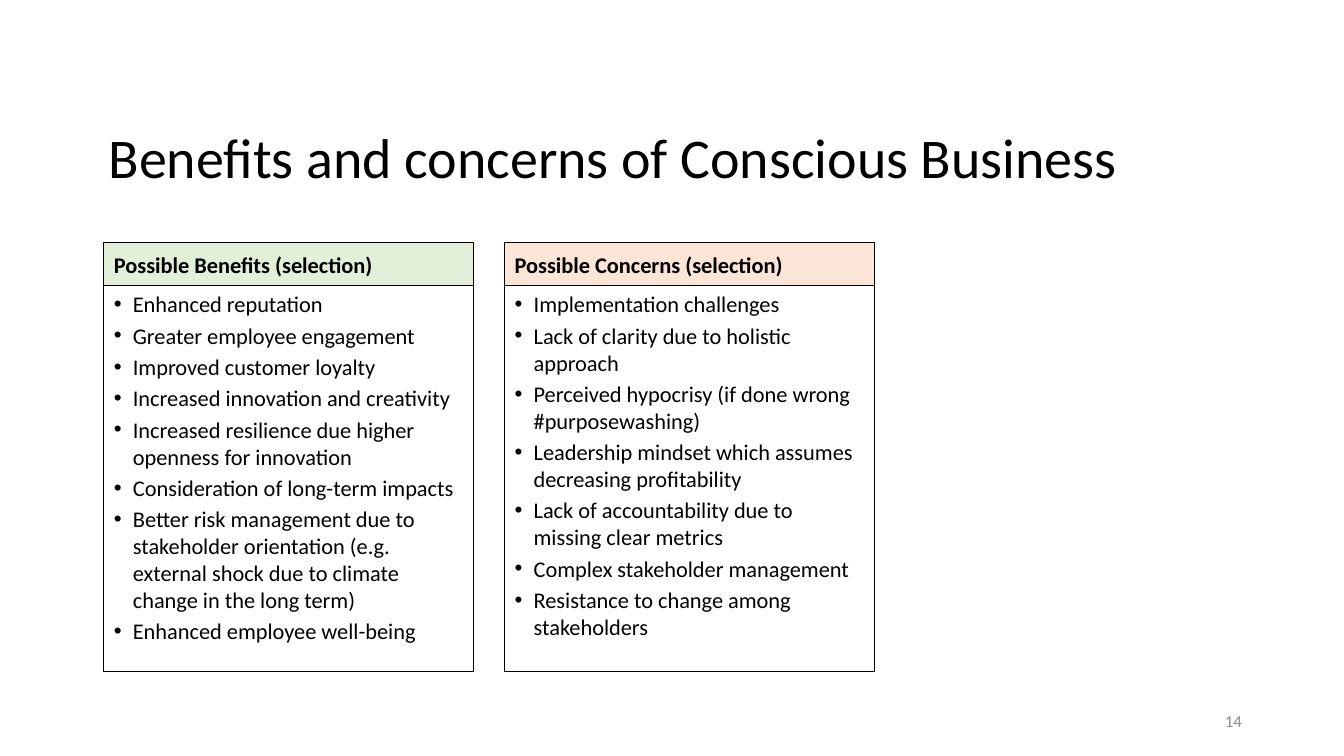
import pptx
import pptx.dml.color
import pptx.enum.shapes
import pptx.enum.text
import pptx.oxml.ns
import pptx.util
from lxml import etree

Cm = pptx.util.Cm
Pt = pptx.util.Pt
ALIGN = pptx.enum.text.PP_ALIGN
ANCHOR = pptx.enum.text.MSO_ANCHOR

COLORS = {
    "text": "000000",
    "page_number": "8C8C8C",
    "panel": "FFFFFF",
    "benefits": "E2F0D9",
    "concerns": "FBE5D6",
}
FONT = "Calibri"
HEADER_HEIGHT = 1.07
PANEL_TOP, PANEL_WIDTH, PANEL_HEIGHT = 6.12, 9.32, 10.8
FIRST_PANEL_LEFT, PANEL_PITCH = 2.62, 10

PANELS = [
    ("Possible Benefits (selection)", "benefits", [
        "Enhanced reputation",
        "Greater employee engagement",
        "Improved customer loyalty",
        "Increased innovation and creativity",
        "Increased resilience due higher openness for innovation",
        "Consideration of long-term impacts",
        "Better risk management due to stakeholder orientation "
        "(e.g. external shock due to climate change in the long term)",
        "Enhanced employee well-being",
    ]),
    ("Possible Concerns (selection)", "concerns", [
        "Implementation challenges",
        "Lack of clarity due to holistic approach",
        "Perceived hypocrisy (if done wrong #purposewashing)",
        "Leadership mindset which assumes decreasing profitability",
        "Lack of accountability due to missing clear metrics",
        "Complex stakeholder management",
        "Resistance to change among stakeholders",
    ]),
]


def rgb(name):
    return pptx.dml.color.RGBColor.from_string(COLORS[name])


def write_text(shape, text, size, color="text", bold=False,
               align=ALIGN.LEFT, anchor=ANCHOR.MIDDLE, margin=0.13):
    frame = shape.text_frame
    frame.word_wrap = True
    frame.vertical_anchor = anchor
    frame.margin_left = frame.margin_right = Cm(0.25)
    frame.margin_top = frame.margin_bottom = Cm(margin)
    frame.text = text
    for paragraph in frame.paragraphs:
        paragraph.alignment = align
        for run in paragraph.runs:
            run.font.name = FONT
            run.font.size = Pt(size)
            run.font.bold = bold
            run.font.color.rgb = rgb(color)
    return frame


def add_bullet(paragraph):
    properties = paragraph._p.get_or_add_pPr()
    properties.set("marL", str(Cm(0.48)))
    properties.set("indent", str(-Cm(0.48)))
    font = etree.SubElement(properties, pptx.oxml.ns.qn("a:buFont"))
    font.set("typeface", "Arial")
    bullet = etree.SubElement(properties, pptx.oxml.ns.qn("a:buChar"))
    bullet.set("char", "•")


def add_box(slide, left, top, width, height, fill):
    shape = slide.shapes.add_shape(
        pptx.enum.shapes.MSO_SHAPE.RECTANGLE,
        Cm(left), Cm(top), Cm(width), Cm(height))
    shape.shadow.inherit = False
    shape.fill.solid()
    shape.fill.fore_color.rgb = rgb(fill)
    shape.line.color.rgb = rgb("text")
    shape.line.width = Pt(0.75)
    return shape


def add_title(slide, left, top, width, height):
    shape = slide.shapes.add_textbox(Cm(left), Cm(top), Cm(width), Cm(height))
    frame = write_text(shape, "Benefits and concerns of Conscious Business", 40)
    frame.paragraphs[0].line_spacing = 0.9


def add_page_number(slide, left, top, width, height):
    shape = slide.shapes.add_textbox(Cm(left), Cm(top), Cm(width), Cm(height))
    write_text(shape, "14", 12, "page_number", align=ALIGN.RIGHT)


def add_panel(slide, left, top, width, height, heading, fill, points):
    header = add_box(slide, left, top, width, HEADER_HEIGHT, fill)
    write_text(header, heading, 16, bold=True, margin=0.08)
    body = add_box(slide, left, top + HEADER_HEIGHT, width,
                   height - HEADER_HEIGHT, "panel")
    frame = write_text(body, "\n".join(points), 16, anchor=ANCHOR.TOP)
    for index, paragraph in enumerate(frame.paragraphs):
        add_bullet(paragraph)
        if index:
            paragraph.space_before = Pt(3.2)


def main():
    presentation = pptx.Presentation()
    presentation.slide_width = Cm(33.87)
    presentation.slide_height = Cm(19.05)
    slide = presentation.slides.add_slide(presentation.slide_layouts[6])
    add_title(slide, 2.49, 2.21, 29.21, 3.68)
    for index, (heading, fill, points) in enumerate(PANELS):
        add_panel(slide, FIRST_PANEL_LEFT + index * PANEL_PITCH + index * 0.1,
                  PANEL_TOP, PANEL_WIDTH, PANEL_HEIGHT, heading, fill, points)
    add_page_number(slide, 23.93, 17.65, 7.62, 1.02)
    presentation.save("out.pptx")


if __name__ == "__main__":
    main()
